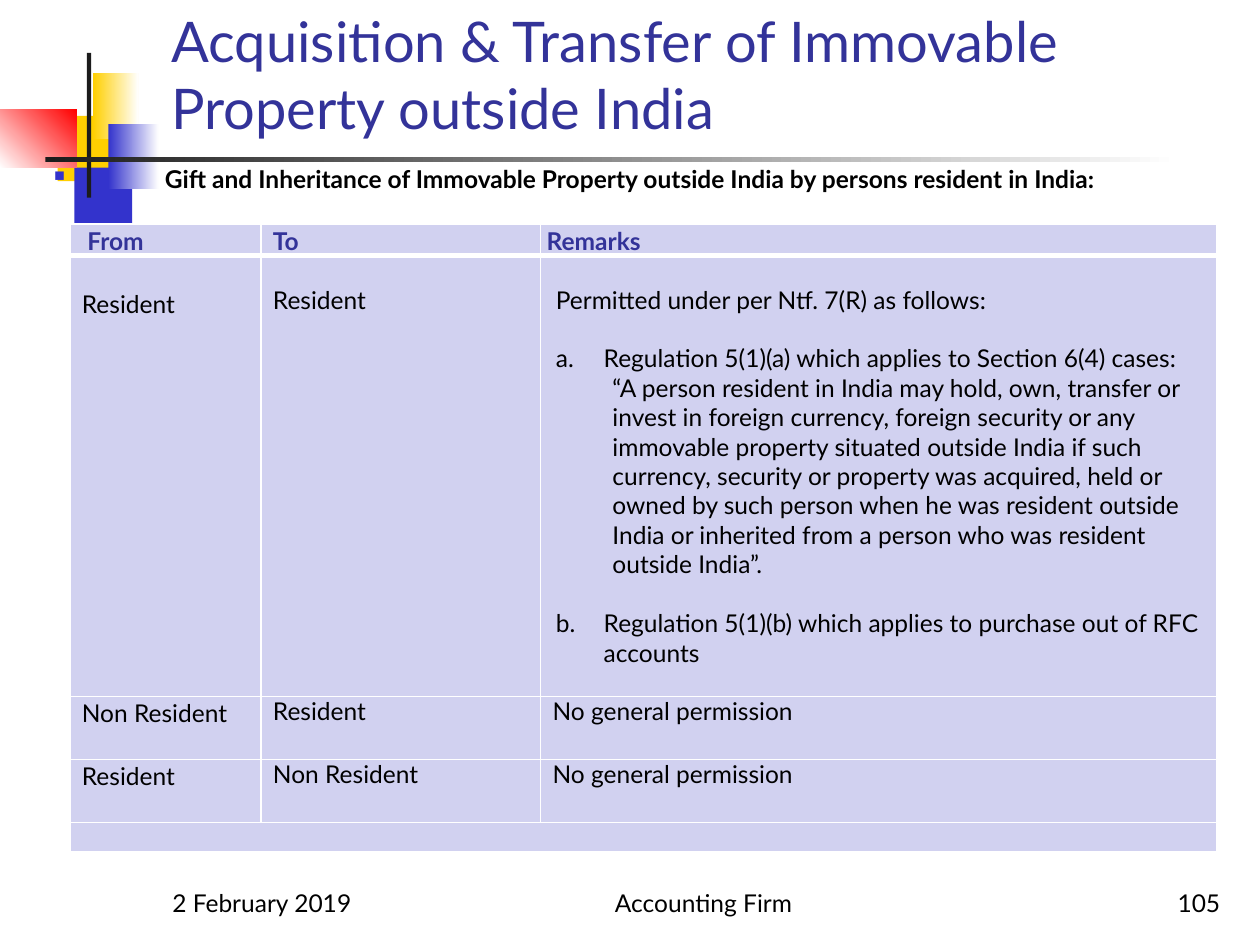
"""Build the slide on acquisition and transfer of immovable property outside India."""
from dataclasses import dataclass

from lxml import etree
from pptx import Presentation
from pptx import util as u
from pptx.dml.color import RGBColor
from pptx.enum import shapes, text
from pptx.oxml import ns

Pt = u.Pt


@dataclass(frozen=True)
class Theme:
    font: str = "Lato"
    heading: str = "333399"
    ink: str = "000000"
    dark: str = "1C1C1C"
    paper: str = "FFFFFF"
    blue: str = "3333CC"
    gold: str = "FFCF01"
    red: str = "FF0000"
    cell: str = "D1D1F0"
    title_size: int = 32
    body_size: int = 14


class Deck:
    def __init__(self, theme):
        self.theme = theme
        self.file = Presentation()
        self.file.slide_width, self.file.slide_height = Pt(720), Pt(540)
        self.slide = self.file.slides.add_slide(self.file.slide_layouts[5])

    def element(self, parent, tag, **attributes):
        return etree.SubElement(parent, ns.qn(tag), attributes)

    def run(self, paragraph, wording, color=None, size=None, bold=False):
        run = paragraph.add_run()
        run.text = wording
        run.font.name = self.theme.font
        run.font.size = Pt(size or self.theme.body_size)
        run.font.bold = bold
        run.font.color.rgb = RGBColor.from_string(color or self.theme.ink)

    def title(self, wording, box):
        title = self.slide.shapes.title
        title.left, title.top, title.width, title.height = map(Pt, box)
        frame = title.text_frame
        frame.auto_size = text.MSO_AUTO_SIZE.NONE
        frame.vertical_anchor = text.MSO_ANCHOR.BOTTOM
        paragraph = frame.paragraphs[0]
        paragraph.alignment = text.PP_ALIGN.LEFT
        self.run(paragraph, wording, self.theme.heading, self.theme.title_size)

    def block(self, box, color, fade_to=None, angle=0):
        block = self.slide.shapes.add_shape(shapes.MSO_SHAPE.RECTANGLE, *map(Pt, box))
        block.shadow.inherit = False
        block.line.fill.background()
        if fade_to is None:
            block.fill.solid()
            block.fill.fore_color.rgb = RGBColor.from_string(color)
            return
        block.fill.gradient()
        block.fill.gradient_angle = angle
        for stop, shade in zip(block.fill.gradient_stops, (color, fade_to)):
            stop.color.rgb = RGBColor.from_string(shade)

    def textbox(self, box, anchor, align):
        frame = self.slide.shapes.add_textbox(*map(Pt, box)).text_frame
        frame.word_wrap = True
        frame.vertical_anchor = anchor
        frame.paragraphs[0].alignment = align
        return frame.paragraphs[0]

    def lead(self, wording, box):
        paragraph = self.textbox(box, text.MSO_ANCHOR.TOP, text.PP_ALIGN.LEFT)
        props = self.indent(paragraph, 63.36, -63.36)
        color = self.element(props, "a:buClr")
        self.element(color, "a:srgbClr", val=self.theme.blue)
        self.element(props, "a:buSzPct", val="60000")
        self.element(props, "a:buChar", char="■")
        self.run(paragraph, wording, bold=True)

    def footer(self, wording, box, align):
        self.run(self.textbox(box, text.MSO_ANCHOR.BOTTOM, align), wording)

    def indent(self, paragraph, left, first=0):
        props = paragraph._p.get_or_add_pPr()
        props.set("marL", str(int(Pt(left))))
        props.set("indent", str(int(Pt(first))))
        return props

    def table(self, box, widths, heights):
        table = self.slide.shapes.add_table(len(heights), len(widths), *map(Pt, box)).table
        table.first_row = table.horz_banding = False
        for column, width in zip(table.columns, widths):
            column.width = Pt(width)
        for row, height in zip(table.rows, heights):
            row.height = Pt(height)
        for index, row in enumerate(table.rows):
            for cell in row.cells:
                self.style_cell(cell, top=3 if index == 1 else 1, bottom=3 if index == 0 else 1)
        return table

    def style_cell(self, cell, top, bottom):
        cell.margin_left = cell.margin_right = cell.margin_top = cell.margin_bottom = 0
        props = cell._tc.get_or_add_tcPr()
        for side, width in (("L", 1), ("R", 1), ("T", top), ("B", bottom)):
            line = self.element(props, f"a:ln{side}", w=str(int(Pt(width))))
            fill = self.element(line, "a:solidFill")
            self.element(fill, "a:srgbClr", val=self.theme.paper)
        cell.fill.solid()
        cell.fill.fore_color.rgb = RGBColor.from_string(self.theme.cell)

    def entry(self, cell, wording, left, top=0, spacing=1.0, color=None, bold=False):
        cell.margin_left, cell.margin_top = Pt(left), Pt(top)
        paragraph = cell.text_frame.paragraphs[0]
        paragraph.line_spacing = spacing
        self.run(paragraph, wording, color, bold=bold)

    def remarks(self, cell, items, top):
        cell.margin_top = Pt(top)
        frame = cell.text_frame
        for index, (wording, left, first, before, number) in enumerate(items):
            paragraph = frame.add_paragraph() if index else frame.paragraphs[0]
            paragraph.space_before = Pt(before)
            props = self.indent(paragraph, left, first)
            if number:
                self.element(props, "a:buAutoNum", type="alphaLcPeriod", startAt=str(number))
            self.run(paragraph, wording)

    def closing_row(self, cells):
        cells[0].merge(cells[-1])
        for cell in cells:
            paragraph = cell.text_frame.paragraphs[0]._p
            self.element(paragraph, "a:endParaRPr", sz=str(self.theme.body_size * 100))


def main():
    theme = Theme()
    deck = Deck(theme)

    for box, *colors in (
        ((33, 66.2, 34.6, 37.4), theme.gold),
        ((42.5, 95.8, 33.1, 37.4), theme.blue),
        ((53.3, 41.8, 25.9, 37.4), theme.gold, theme.paper),
        ((61.9, 70.6, 28.8, 37.4), theme.blue, theme.paper),
        ((0, 62.6, 44, 33.1), theme.paper, theme.red, 45),
        ((49.7, 30.2, 2.5, 82.8), theme.dark),
        ((26, 90, 648, 2.5), theme.dark, theme.paper),
    ):
        deck.block(box, *colors)

    deck.title("Acquisition & Transfer of Immovable Property outside India",
               (90.7, 10, 613.5, 74.2))
    deck.lead("Gift and Inheritance of Immovable Property outside India by persons "
              "resident in India:", (23.8, 90, 681, 414))

    for wording, left, width, align in (
        ("2 February 2019", 91.4, 150, text.PP_ALIGN.LEFT),
        ("Accounting Firm", 288, 228, text.PP_ALIGN.CENTER),
        ("105", 554.4, 150, text.PP_ALIGN.RIGHT),
    ):
        deck.footer(wording, (left, 491.8, width, 36), align)

    heights = (18, 252, 36, 36, 16.8)
    table = deck.table((40, 128, 655.2, sum(heights)), (109.2, 159.8, 386.2), heights)

    for column, (wording, left) in enumerate((("From", 10), ("To", 6.8), ("Remarks", 3.4))):
        deck.entry(table.cell(0, column), wording, left, spacing=1.07,
                   color=theme.heading, bold=True)

    transfers = (
        ("Resident", "Resident", None),
        ("Non Resident", "Resident", "No general permission"),
        ("Resident", "Non Resident", "No general permission"),
    )
    for row, (giver, receiver, remark) in enumerate(transfers, 1):
        top = 16.8 if row == 1 else 0
        deck.entry(table.cell(row, 0), giver, 6.8, top * 1.07, spacing=1.07)
        deck.entry(table.cell(row, 1), receiver, 6.8, top)
        if remark:
            deck.entry(table.cell(row, 2), remark, 6.8)

    deck.remarks(table.cell(1, 2), (
        ("Permitted under per Ntf. 7(R) as follows:", 8.64, 0, 0, None),
        ("Regulation 5(1)(a) which applies to Section 6(4) cases:", 36, -27.36, 16.8, 1),
        ("“A person resident in India may hold, own, transfer or invest in foreign currency, "
         "foreign security or any immovable property situated outside India if such currency, "
         "security or property was acquired, held or owned by such person when he was resident "
         "outside India or inherited from a person who was resident outside India”.",
         41, 0, 0, None),
        ("Regulation 5(1)(b) which applies to purchase out of RFC accounts", 36, -27.36, 16.8, 2),
    ), top=16.8)
    deck.closing_row([table.cell(4, column) for column in range(3)])

    deck.file.save("out.pptx")


if __name__ == "__main__":
    main()
